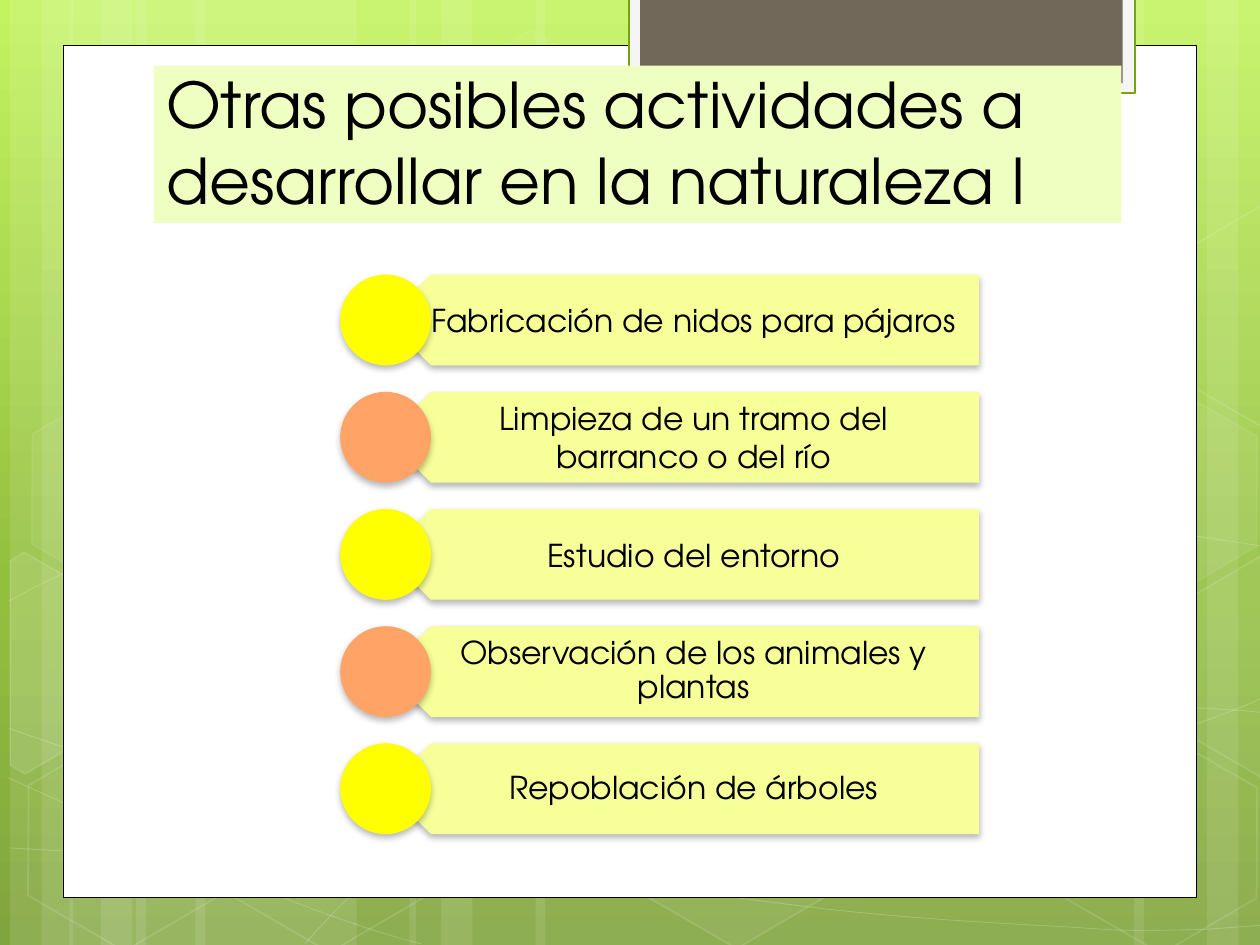
"""Build a slide listing outdoor activities over a green patterned backdrop."""
import copy
import math
from collections import namedtuple

import pptx
import pptx.dml.color
import pptx.enum.shapes
import pptx.enum.text
import pptx.oxml
import pptx.oxml.ns
import pptx.util

Box = namedtuple("Box", "left top width height")
SHAPES = pptx.enum.shapes.MSO_SHAPE
ANCHOR, ALIGN = pptx.enum.text.MSO_ANCHOR, pptx.enum.text.PP_ALIGN
COLUMNS, ROWS, UNIT = 10, 7.5, pptx.util.Inches(1)
COLOURS = {
    "sky": "C3F35F", "leaf": "93BF3F", "moss": "81A53E", "white": "FFFFFF", "black": "000000", "tab": "F5F5F5",
    "tab_edge": "74A510", "stone": "71685A", "title": "EFFFC1", "plate": "F6FF98", "yellow": "FFFF00",
    "orange": "FFA466",
}
BANDS = [(1.08, 1.75), (0.08, 0.5), (0.33, 0.83), (1.55, 1.75), (0.55, 0.5), (0.8, 0.83),
         (7.33, 1.75), (9.58, 0.5), (9, 0.83), (4.25, 3.08), (3.25, 0.5), (3.5, 0.83)]
CURVES = [
    [(0.07, 6.73), (0.61, 6.76), (1.15, 6.79), (1.9, 6.78), (2.65, 6.77), (3.58, 6.75), (4.58, 6.65),
     (5.58, 6.55), (7, 6.36), (7.92, 6.17), (8.83, 5.98), (9.77, 5.68), (10.07, 5.51)],
    [(0.07, 4.77), (0.36, 4.61), (0.65, 4.46), (1.21, 4.31), (1.78, 4.16), (2.59, 3.94), (3.47, 3.87),
     (4.36, 3.8), (5.44, 3.79), (6.54, 3.87), (7.64, 3.95), (9.47, 4.26), (10.07, 4.34)],
    [(0.06, 6.17), (1.27, 6.72), (2.47, 7.27), (3.34, 7.49)],
    [(0.07, 5.78), (0.38, 5.89), (0.7, 6), (1.28, 6.16), (1.86, 6.31), (2.73, 6.56), (3.57, 6.73),
     (4.4, 6.9), (5.45, 7.08), (6.28, 7.18), (7.11, 7.29), (8, 7.33), (8.53, 7.36), (9.05, 7.4),
     (9.19, 7.38), (9.45, 7.38), (9.71, 7.37), (9.89, 7.35), (10.07, 7.34)],
    [(2.42, 7.49), (2.6, 7.29), (2.78, 7.09), (3.02, 6.91), (3.26, 6.73), (3.6, 6.53), (3.88, 6.39),
     (4.16, 6.25), (4.33, 6.19), (4.7, 6.09), (5.06, 5.99), (5.73, 5.85), (6.08, 5.78), (6.44, 5.71),
     (6.49, 5.71), (6.8, 5.69), (7.11, 5.66), (7.6, 5.63), (7.94, 5.62), (8.29, 5.61), (8.86, 5.62),
     (8.86, 5.62), (8.86, 5.62), (9.53, 5.62), (9.53, 5.62), (9.71, 5.63), (9.88, 5.64), (9.97, 5.65),
     (10.06, 5.66), (10.03, 5.65), (10.06, 5.66)],
]
HEXAGONS = [(3.34, 0.36, 4, 8), (4.97, 5.89, 6, 12), (0.11, 5.91, 0, 12), (0.14, 3.12, 7, 8),
            (1.74, 5.92, 0, 12), (7.53, 4.53, 10, 12), (8.34, 5.93, 0, 12), (8.34, 3.14, 7, 8)]
CUT_HEXAGONS = [
    (10, (0.36, 5.35), [(0.08, 4.45), (0.19, 4.38), (0.96, 4.82), (0.95, 5.7), (0.2, 6.14), (0.08, 6.07)]),
    (4, (9.85, 5.2), [(9.26, 4.85), (10.01, 4.41), (10.09, 4.46), (10.09, 6.13), (10.02, 6.17), (9.26, 5.73)]),
    (0, (9.85, 2.41), [(9.26, 2.07), (10.01, 1.63), (10.1, 1.68), (10.09, 3.35), (10.02, 3.39), (9.26, 2.95)]),
]
ACTIVITIES = [("Fabricación de nidos para pájaros", None), ("Limpieza de un tramo del barranco o del río", None),
              ("Estudio del entorno", None), ("Observación de los animales y plantas", 0.9),
              ("Repoblación de árboles", 0.9)]


def lengths(box):
    """Turn grid units into slide lengths."""
    return [round(value * UNIT) for value in box]


def paint(fill, name):
    """Give a fill the named solid colour, or none."""
    if name:
        fill.solid()
        fill.fore_color.rgb = pptx.dml.color.RGBColor.from_string(COLOURS[name])
    else:
        fill.background()


def style(shape, fill=None, opacity=100, line=None, width=1, line_opacity=100):
    """Set the fill and line of a shape and remove its shadow."""
    shape.shadow.inherit = False
    paint(shape.fill, fill if opacity else None)
    paint(shape.line.fill, line)
    if line:
        shape.line.width = pptx.util.Pt(width)
    for parent, percent in (("", opacity), ("/a:ln", line_opacity)):
        for colour in shape.element.xpath(f"./p:spPr{parent}/a:solidFill/a:srgbClr"):
            if percent < 100:
                colour.append(pptx.oxml.parse_xml(
                    f'<a:alpha {pptx.oxml.ns.nsdecls("a")} val="{percent * 1000}"/>'))
    return shape


def add_preset(slide, kind, box, **looks):
    """Add a styled preset shape."""
    return style(slide.shapes.add_shape(kind, *lengths(box)), **looks)


def add_outline(slide, box, points, closed, **looks):
    """Add a styled outline through points relative to the box."""
    corners = [lengths((box.left + x, box.top + y)) for x, y in points]
    builder = slide.shapes.build_freeform(*corners[0], scale=1.0)
    builder.add_line_segments(corners[1:], close=closed)
    return style(builder.convert_to_shape(), **looks)


def bend(shape, points):
    """Join each three steps of an open outline into one cubic curve."""
    steps = shape.element.xpath(".//a:lnTo")
    for first in range(0, len(steps), 3):
        start, lead, trail, end = points[first:first + 4]
        if start == lead and trail == end:
            for step in steps[first:first + 2]:
                step.getparent().remove(step)
            continue
        curve = pptx.oxml.parse_xml(f'<a:cubicBezTo {pptx.oxml.ns.nsdecls("a")}/>')
        steps[first].addprevious(curve)
        for step in steps[first:first + 3]:
            curve.append(step[0])
            step.getparent().remove(step)


def turn_back(points, centre, degrees):
    """Turn points anticlockwise about a centre."""
    cosine, sine = math.cos(math.radians(degrees)), math.sin(math.radians(degrees))
    offsets = [(x - centre[0], y - centre[1]) for x, y in points]
    return [(centre[0] + x * cosine + y * sine, centre[1] - x * sine + y * cosine) for x, y in offsets]


def add_shadow(shape):
    """Add a soft shadow below a shape."""
    shape.element.spPr.find(pptx.oxml.ns.qn("a:effectLst")).append(pptx.oxml.parse_xml(
        f'<a:outerShdw {pptx.oxml.ns.nsdecls("a")} blurRad="50800" dist="25400" dir="5400000" rotWithShape="0">'
        '<a:srgbClr val="000000"><a:alpha val="28000"/></a:srgbClr></a:outerShdw>'))


def add_text(slide, box, text, size, anchor, insets, alignment, spacing=None):
    """Add a wrapped text box holding one paragraph."""
    shape = slide.shapes.add_textbox(*lengths(box))
    frame = shape.text_frame
    frame.word_wrap = True
    frame.vertical_anchor = anchor
    frame.margin_left, frame.margin_top, frame.margin_right, frame.margin_bottom = lengths(insets)
    paragraph = frame.paragraphs[0]
    paragraph.alignment = alignment
    paragraph.line_spacing = spacing
    run = paragraph.add_run()
    run.text = text
    run.font.name = "TeX Gyre Adventor"
    run.font.size = pptx.util.Pt(size)
    paint(run.font.fill, "black")
    return shape


def add_backdrop(slide, box):
    """Draw the gradient, bands, curves and hexagons."""
    fill = slide.background.fill
    fill.gradient()
    fill.gradient_angle = 270
    stop_list = slide.element.xpath(".//a:gsLst")[0]
    stop_list.append(copy.deepcopy(stop_list[-1]))
    for stop, name, position in zip(fill.gradient_stops, ("sky", "leaf", "moss"), (0, 0.62, 1)):
        stop.color.rgb = pptx.dml.color.RGBColor.from_string(COLOURS[name])
        stop.position = position
    for left, width in BANDS:
        band = Box(box.left + left, box.top, width, box.height)
        add_preset(slide, SHAPES.RECTANGLE, band, fill="white", opacity=10)
    for points in CURVES:
        bend(add_outline(slide, box, points, False, line="white", width=0.5, line_opacity=20), points)
    for left, top, opacity, line_opacity in HEXAGONS:
        hexagon = add_preset(slide, SHAPES.HEXAGON, Box(box.left + left, box.top + top, 1.75, 1.52),
                             fill="white", opacity=opacity, line="white", line_opacity=line_opacity)
        hexagon.adjustments[0], hexagon.adjustments[1] = 0.285, 1.155
        hexagon.rotation = 30
    for opacity, centre, points in CUT_HEXAGONS:
        add_outline(slide, box, turn_back(points + points[:1], centre, 30), True, fill="white",
                    opacity=opacity, line="white", line_opacity=12).rotation = 30


def add_page(slide, box):
    """Draw the white page with the tab on its top edge."""
    add_preset(slide, SHAPES.RECTANGLE, box, fill="white", line="black", width=0.5)
    tab = Box(box.left + 4.49, box.top - 0.38, 4.02, 0.76)
    add_preset(slide, SHAPES.RECTANGLE, tab, fill="tab", line="tab_edge", width=1.25)
    add_preset(slide, SHAPES.RECTANGLE, Box(tab.left + 0.09, tab.top, 3.83, 0.68), fill="stone")


def add_title(slide, box):
    """Write the title on its pale green panel."""
    title = add_text(slide, box, "Otras posibles actividades a desarrollar en la naturaleza I", 36,
                     ANCHOR.BOTTOM, (0.1, 0.05, 0.1, 0.05), ALIGN.LEFT)
    paint(title.fill, "title")


def add_activities(slide, box):
    """Stack the activities as plates with alternating discs."""
    size = 0.72
    pitch = (box.height - size) / (len(ACTIVITIES) - 1)
    for index, (text, spacing) in enumerate(ACTIVITIES):
        top = box.top + index * pitch
        plate_box = Box(box.left + size / 2, top, box.width - size / 2, size)
        plate = add_preset(slide, SHAPES.PENTAGON, plate_box, fill="plate")
        plate.rotation = 180
        add_text(slide, plate_box, text, 18, ANCHOR.MIDDLE, (0.32, 0.07, 0.14, 0.07), ALIGN.CENTER, spacing)
        disc = add_preset(slide, SHAPES.OVAL, Box(box.left, top, size, size), fill=("yellow", "orange")[index % 2])
        add_shadow(plate)
        add_shadow(disc)


def main():
    """Build and save the presentation."""
    presentation = pptx.Presentation()
    presentation.slide_width, presentation.slide_height = lengths((COLUMNS, ROWS))
    slide = presentation.slides.add_slide(presentation.slide_layouts[6])
    add_backdrop(slide, Box(0, 0, COLUMNS, ROWS))
    add_page(slide, Box(0.5, 0.36, 9, 6.76))
    add_title(slide, Box(1.22, 0.52, 7.68, 1.25))
    add_activities(slide, Box(2.7, 2.18, 5.07, 4.44))
    presentation.save("out.pptx")


if __name__ == "__main__":
    main()
